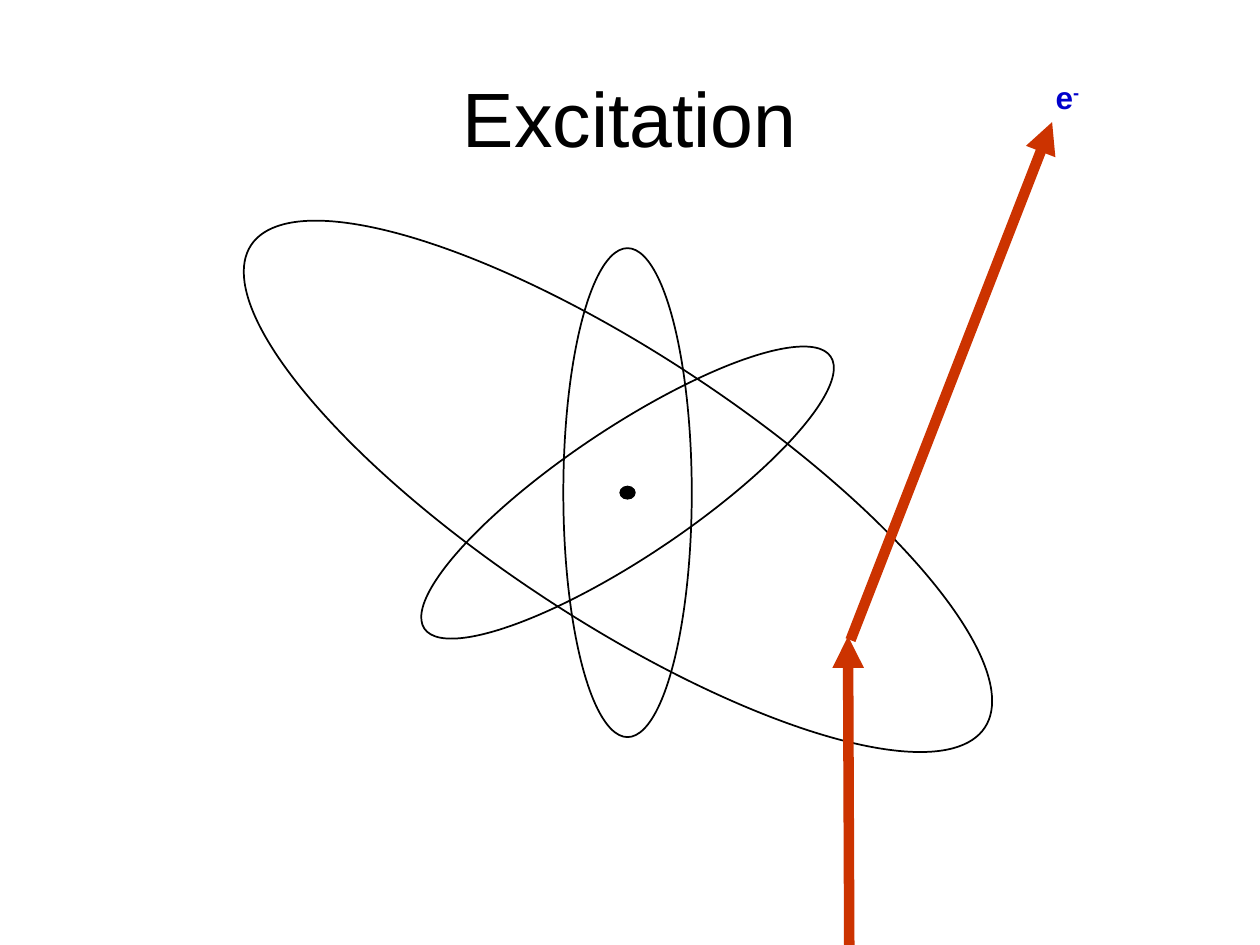
from typing import NamedTuple

from lxml.etree import SubElement
from pptx import Presentation
from pptx.dml.color import RGBColor
from pptx.enum.shapes import MSO_CONNECTOR as Connector, MSO_SHAPE as Shape
from pptx.enum.text import MSO_ANCHOR as Anchor, PP_ALIGN as Align
from pptx.oxml.ns import qn
from pptx.util import Pt

COLORS = {"ink": "000000", "electron": "0000CC", "path": "CC3300"}
TITLE_FORMAT = {"name": "Arial", "size": Pt(44), "bold": False}
ELECTRON_FORMAT = {"name": "Arial", "size": Pt(18), "bold": True}


class Ellipse(NamedTuple):
    left: float
    top: float
    width: float
    height: float
    rotation: float
    line_width: float = 1
    filled: bool = False


class Arrow(NamedTuple):
    start: tuple[float, float]
    end: tuple[float, float]


ELLIPSES = [
    Ellipse(218.9, 244.8, 279.4, 73.4, 270),
    Ellipse(355, 277.2, 7.2, 8.6, 270, 0.75, True),
    Ellipse(102.2, 201.6, 501.8, 152.6, 213.3),
    Ellipse(218.9, 244.8, 279.4, 73.4, 326.2),
]
ELECTRON_PATH = [
    Arrow((485.3, 540), (484.6, 363.6)),
    Arrow((486, 365.8), (601.2, 69.8)),
]


def color(name: str) -> RGBColor:
    return RGBColor.from_string(COLORS[name])


def draw_ellipse(slide, ellipse: Ellipse) -> None:
    oval = slide.shapes.add_shape(Shape.OVAL, *map(Pt, ellipse[:4]))
    oval.rotation = ellipse.rotation
    oval.shadow.inherit = False
    if ellipse.filled:
        oval.fill.solid()
        oval.fill.fore_color.rgb = color("ink")
    else:
        oval.fill.background()
    oval.line.color.rgb = color("ink")
    oval.line.width = Pt(ellipse.line_width)


def draw_arrow(slide, arrow: Arrow) -> None:
    connector = slide.shapes.add_connector(
        Connector.STRAIGHT, *map(Pt, arrow.start + arrow.end))
    connector.line.color.rgb = color("path")
    connector.line.width = Pt(6)
    SubElement(connector.line._get_or_add_ln(), qn("a:tailEnd"), type="triangle")
    SubElement(connector._element.spPr, qn("a:effectLst"))


def add_text_box(slide, box: tuple[float, ...], wrap: bool):
    frame = slide.shapes.add_textbox(*map(Pt, box)).text_frame
    frame.word_wrap = wrap
    return frame


def add_run(paragraph, text: str, font_format: dict, color_name: str):
    run = paragraph.add_run()
    run.text = text
    for attribute, value in font_format.items():
        setattr(run.font, attribute, value)
    run.font.color.rgb = color(color_name)
    return run


def main() -> None:
    prs = Presentation()
    prs.slide_width, prs.slide_height = Pt(720), Pt(540)
    slide = prs.slides.add_slide(prs.slide_layouts[6])

    title = add_text_box(slide, (36, 21.6, 648, 90), True)
    title.vertical_anchor = Anchor.MIDDLE
    title.paragraphs[0].alignment = Align.CENTER
    add_run(title.paragraphs[0], "Excitation", TITLE_FORMAT, "ink")

    for ellipse in ELLIPSES:
        draw_ellipse(slide, ellipse)

    electron = add_text_box(slide, (596.2, 41, 28.8, 28.8), False).paragraphs[0]
    add_run(electron, "e", ELECTRON_FORMAT, "electron")
    charge = add_run(electron, "-", ELECTRON_FORMAT, "electron")
    charge._r.get_or_add_rPr().set("baseline", "30000")

    for arrow in ELECTRON_PATH:
        draw_arrow(slide, arrow)

    prs.save("out.pptx")


if __name__ == "__main__":
    main()
